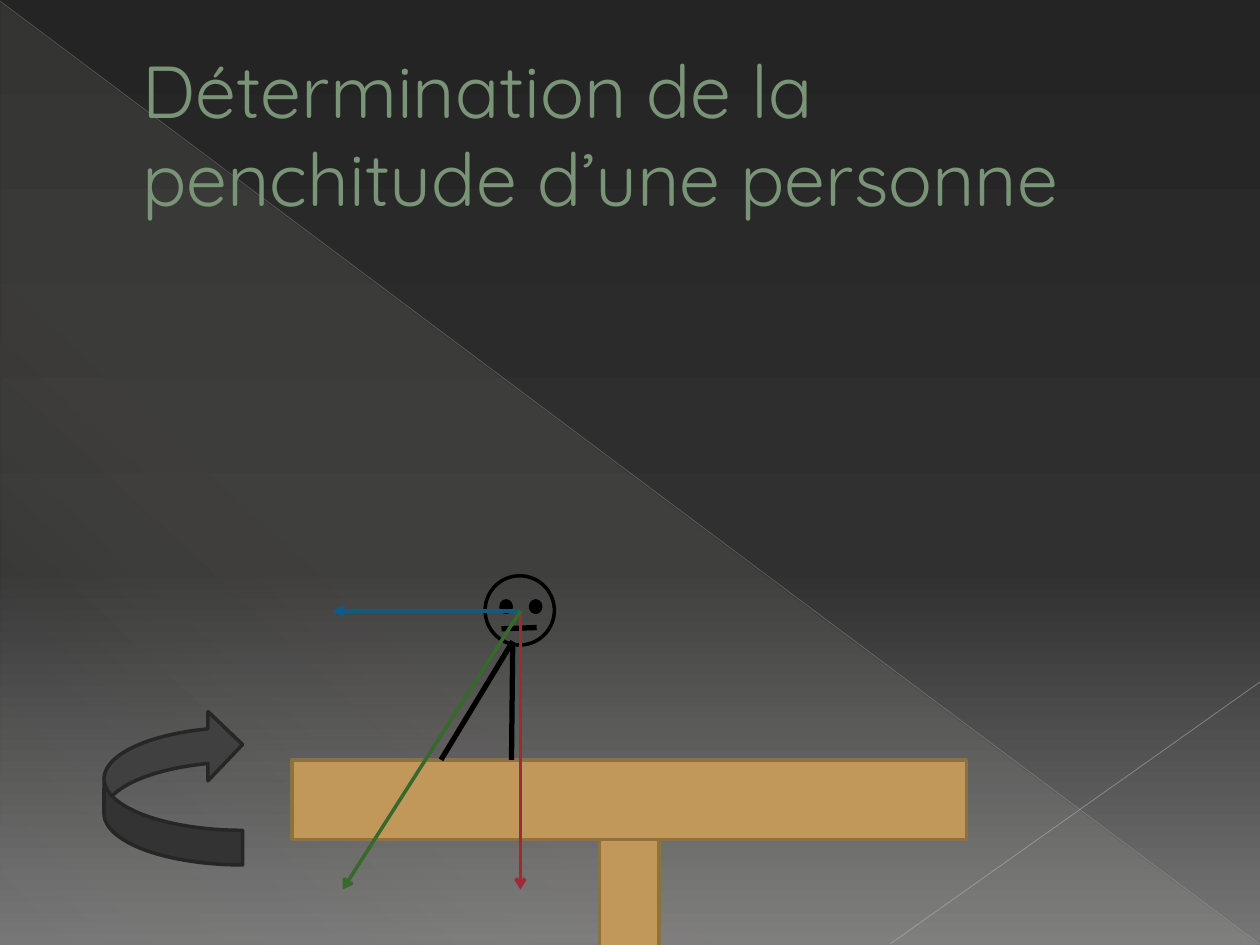
from lxml import etree
from pptx import Presentation
from pptx import util as u
from pptx.dml.color import RGBColor
from pptx.enum import shapes, text
from pptx.oxml.ns import qn

COLOURS = {
    "night": "242424", "dusk": "303030", "fog": "767676", "haze": "E3DED1",
    "long_ray": "B6B6B6", "short_ray": "BFBFBF", "title": "7A9477",
    "wood": "C19859", "wood_edge": "8F7042", "ink": "000000",
    "red": "9F2936", "blue": "115A86", "green": "37682C",
    "turn": "404040", "turn_edge": "262626",
}
FONT = "Quicksand"
CENTRE = (297.4, 349.2)
FLOOR = 434.2
VECTOR_END = 508.3


def colour(name):
    return RGBColor.from_string(COLOURS[name])


def add_alpha(clr, percent):
    etree.SubElement(clr, qn("a:alpha"), val=str(percent * 1000))


def set_gradient(fill, stops, angle):
    fill.gradient()
    grad = fill._xPr.find(qn("a:gradFill"))
    for child in list(grad):
        grad.remove(child)
    stop_list = etree.SubElement(grad, qn("a:gsLst"))
    for position, name, opacity in stops:
        stop = etree.SubElement(stop_list, qn("a:gs"), pos=str(position * 1000))
        clr = etree.SubElement(stop, qn("a:srgbClr"), val=COLOURS[name])
        if opacity < 100:
            add_alpha(clr, opacity)
    etree.SubElement(grad, qn("a:lin"), ang=str(angle * 60000), scaled="0")


def add_form(page, kind, left, top, width, height, fill=None, line=None, rotation=0):
    form = page.shapes.add_shape(kind, u.Pt(left), u.Pt(top), u.Pt(width), u.Pt(height))
    form.shadow.inherit = False
    form.rotation = rotation
    if fill:
        form.fill.solid()
        form.fill.fore_color.rgb = colour(fill)
    else:
        form.fill.background()
    if line:
        form.line.color.rgb = colour(line)
        form.line.width = u.Pt(2)
    else:
        form.line.fill.background()
    return form


def add_line(page, start, end, name, width, opacity=100, arrow=False):
    line = page.shapes.add_connector(
        shapes.MSO_CONNECTOR.STRAIGHT, *[u.Pt(value) for value in (*start, *end)])
    line.line.color.rgb = colour(name)
    line.line.width = u.Pt(width)
    outline = line.line._get_or_add_ln()
    if opacity < 100:
        add_alpha(outline.find(".//" + qn("a:srgbClr")), opacity)
    if arrow:
        etree.SubElement(outline, qn("a:tailEnd"), type="arrow")
    etree.SubElement(line._element.spPr, qn("a:effectLst"))


def add_text(page, words, left, top, width, height, size, name, indent=0):
    box = page.shapes.add_textbox(u.Pt(left), u.Pt(top), u.Pt(width), u.Pt(height))
    frame = box.text_frame
    frame.word_wrap = True
    frame.vertical_anchor = text.MSO_ANCHOR.MIDDLE
    para = frame.paragraphs[0]
    properties = para._p.get_or_add_pPr()
    properties.set("marL", str(u.Pt(indent)))
    properties.set("indent", "0")
    span = para.add_run()
    span.text = words
    span.font.name = FONT
    span.font.size = u.Pt(size)
    span.font.color.rgb = colour(name)


def draw_backdrop(page):
    set_gradient(page.background.fill,
                 [(0, "night", 100), (60, "dusk", 100), (100, "fog", 100)], 90)
    haze = add_form(page, shapes.MSO_SHAPE.RIGHT_TRIANGLE, 0.5, 1.3, 718.8, 538.5)
    set_gradient(haze.fill, [(0, "haze", 10), (70, "haze", 8), (100, "haze", 1)], 133)
    add_line(page, (0, 0.7), (719.5, 539.3), "long_ray", 0.39, opacity=35)
    add_line(page, (720, 389.7), (508.8, 539.3), "short_ray", 0.47, opacity=45)


def draw_table(page):
    for box in [(342.7, 445.7, 33.8, 147.6), (167, FLOOR, 385.2, 45.4)]:
        add_form(page, shapes.MSO_SHAPE.FLOWCHART_PROCESS, *box, "wood", "wood_edge")


def draw_person(page):
    add_form(page, shapes.MSO_SHAPE.OVAL, 277.2, 329, 39.6, 39.6,
             line="ink", rotation=236.2)
    for left in (286.3, 303.2):
        add_form(page, shapes.MSO_SHAPE.FLOWCHART_CONNECTOR, left, 343.4, 5.8, 6.5,
                 "ink", "ink")
    add_line(page, (306.7, 358.6), (286.6, 359.3), "ink", 3)
    add_line(page, (293, 367.9), (292.3, FLOOR), "ink", 3)


def draw_rotation(page):
    turn = add_form(page, shapes.MSO_SHAPE.CURVED_UP_ARROW, 54.7, 410.4, 88.6, 79.2,
                    "turn", "turn_edge", rotation=270)
    turn._element.spPr.find(qn("a:xfrm")).set("flipV", "1")


def main():
    deck = Presentation()
    deck.slide_width, deck.slide_height = u.Pt(720), u.Pt(540)
    page = deck.slides.add_slide(deck.slide_layouts[6])
    draw_backdrop(page)
    add_text(page, "Détermination de la penchitude d’une personne",
             36, 20.9, 648, 110.2, size=42, name="title", indent=38.2)
    draw_table(page)
    draw_person(page)
    add_line(page, CENTRE, (CENTRE[0], VECTOR_END), "red", 2, arrow=True)
    add_line(page, CENTRE, (190.1, CENTRE[1]), "blue", 2, arrow=True)
    draw_rotation(page)
    add_line(page, CENTRE, (195.8, VECTOR_END), "green", 2, arrow=True)
    add_line(page, (293, 366.5), (252, FLOOR), "ink", 3)
    deck.save("out.pptx")


if __name__ == "__main__":
    main()
